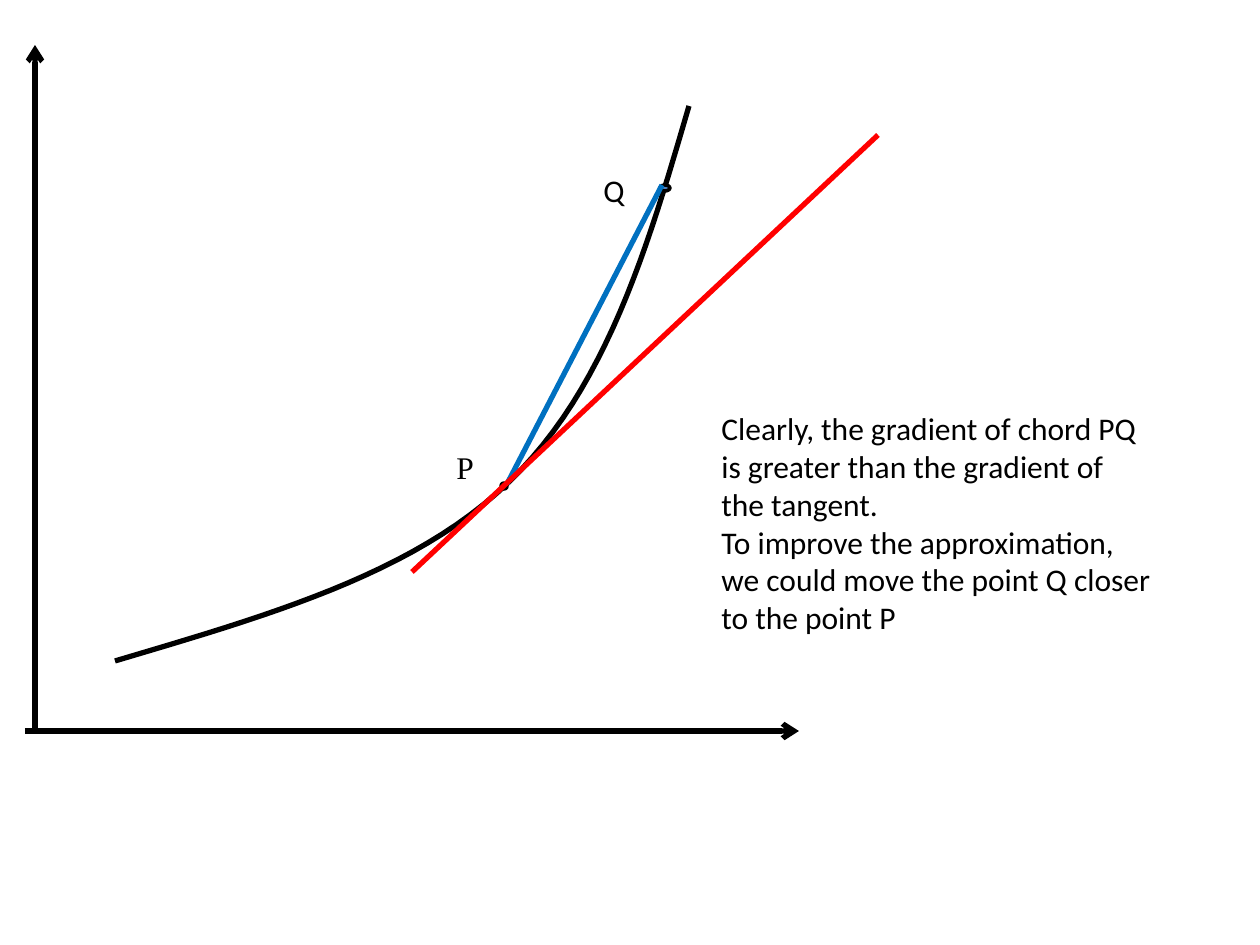
from lxml import etree
from pptx import Presentation
from pptx import util as u
from pptx.dml.color import RGBColor
from pptx.enum import shapes, text
from pptx.oxml.ns import qn

PX = 914400 / 126  # EMU per px
COLORS = {"ink": "000000", "point": "4F81BD", "chord": "0070C0", "tangent": "FF0000"}


def emu(px):
    return u.Emu(round(px * PX))


def color(name):
    return RGBColor.from_string(COLORS[name])


def bezier(start, control_1, control_2, end, steps=24):
    """Points along a cubic Bezier segment, without its start."""
    points = []
    for step in range(1, steps + 1):
        t = step / steps
        weights = ((1 - t) ** 3, 3 * t * (1 - t) ** 2, 3 * t * t * (1 - t), t ** 3)
        corners = (start, control_1, control_2, end)
        points.append(tuple(sum(w * c[axis] for w, c in zip(weights, corners))
                            for axis in (0, 1)))
    return points


class Diagram:
    font = "Calibri"
    size = 18
    weight = 3

    def __init__(self, slide):
        self.shapes = slide.shapes

    def stroke(self, shape, name, weight):
        shape.line.color.rgb = color(name)
        shape.line.width = u.Pt(weight)

    def line(self, start, end, name="ink", arrow=False):
        line = self.shapes.add_connector(
            shapes.MSO_CONNECTOR.STRAIGHT, *map(emu, start + end))
        self.stroke(line, name, self.weight)
        if arrow:
            etree.SubElement(line.line._get_or_add_ln(), qn("a:tailEnd"), type="arrow")
        etree.SubElement(line._element.spPr, qn("a:effectLst"))

    def curve(self, start, points):
        builder = self.shapes.build_freeform(emu(start[0]), emu(start[1]), scale=1.0)
        builder.add_line_segments([(emu(x), emu(y)) for x, y in points], close=False)
        curve = builder.convert_to_shape()
        curve.shadow.inherit = False
        curve.fill.background()
        self.stroke(curve, "ink", self.weight)

    def point(self, *box):
        point = self.shapes.add_shape(shapes.MSO_SHAPE.OVAL, *map(emu, box))
        point.shadow.inherit = False
        point.fill.solid()
        point.fill.fore_color.rgb = color("point")
        self.stroke(point, "ink", 2)

    def label(self, box, *paragraphs, font=None):
        frame = self.shapes.add_textbox(*map(emu, box)).text_frame
        frame.word_wrap = True
        frame.auto_size = text.MSO_AUTO_SIZE.SHAPE_TO_FIT_TEXT
        for index, wording in enumerate(paragraphs):
            paragraph = frame.add_paragraph() if index else frame.paragraphs[0]
            run = paragraph.add_run()
            run.text = wording
            run.font.name = font or self.font
            run.font.size = u.Pt(self.size)
            run.font.color.rgb = color("ink")


def main():
    deck = Presentation()
    deck.slide_width, deck.slide_height = emu(1260), emu(945)
    diagram = Diagram(deck.slides.add_slide(deck.slide_layouts[6]))

    # Function curve, two smooth segments
    curve_start, curve_middle, curve_end = (115, 661), (509, 482), (689, 106)
    diagram.curve(curve_start,
                  bezier(curve_start, (263, 617), (413, 575), curve_middle)
                  + bezier(curve_middle, (606, 389), (648, 247), curve_end))

    # Axes
    diagram.line((25, 731), (799, 731), arrow=True)
    diagram.line((35, 732), (35, 45), arrow=True)

    # Points P and Q
    diagram.point(501, 483, 6, 6)
    diagram.label((444, 442, 49, 50), "P", font="Times New Roman")
    diagram.point(660, 185, 10, 6)
    diagram.label((591, 165, 69, 50), "Q")

    # Chord PQ and tangent at P
    diagram.line((507, 484), (662, 185), "chord")
    diagram.line((412, 572), (878, 135), "tangent")

    # Explanation
    diagram.label(
        (709, 403, 456, 242),
        "Clearly, the gradient of chord PQ is greater than the gradient of the tangent.",
        "To improve the approximation, we could move the point Q closer to the point P")

    deck.save("out.pptx")


if __name__ == "__main__":
    main()
